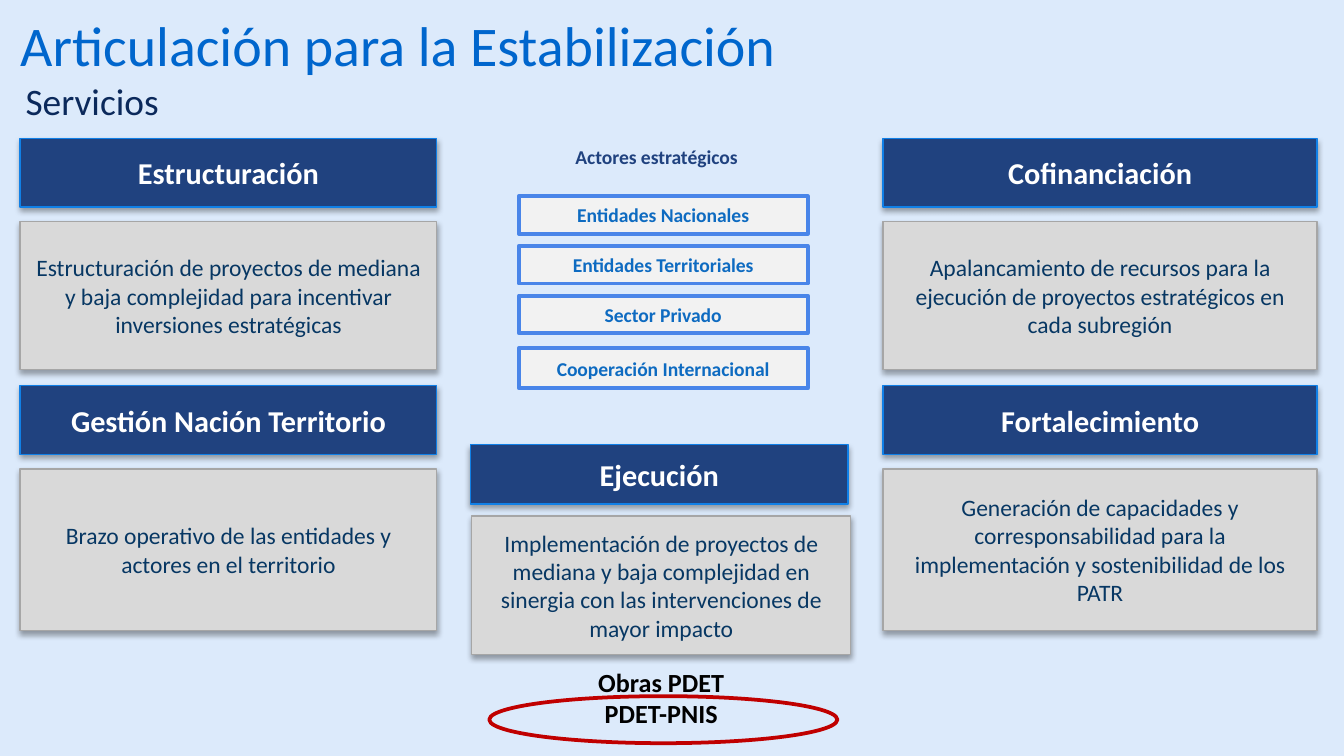
from lxml import etree
from pptx import Presentation, util as u
from pptx.dml.color import RGBColor
from pptx.enum import shapes, text
from pptx.oxml.ns import qn

# Content: heading, body, column and band
SERVICES = [
    ("Estructuración",
     "Estructuración de proyectos de mediana y baja complejidad para incentivar "
     "inversiones estratégicas", "left", "upper"),
    ("Gestión Nación Territorio",
     "Brazo operativo de las entidades y actores en el territorio", "left", "lower"),
    ("Cofinanciación",
     "Apalancamiento de recursos para la ejecución de proyectos estratégicos en "
     "cada subregión", "right", "upper"),
    ("Fortalecimiento",
     "Generación de capacidades y corresponsabilidad para la implementación y "
     "sostenibilidad de los PATR", "right", "lower"),
    ("Ejecución",
     "Implementación de proyectos de mediana y baja complejidad en sinergia con las "
     "intervenciones de mayor impacto", "center", "execution"),
]
ACTORS_TITLE = "Actores estratégicos"
ACTORS = [
    ("Entidades Nacionales", 1.46, 0.28),
    ("Entidades Territoriales", 1.83, 0.28),
    ("Sector Privado", 2.2, 0.28),
    ("Cooperación Internacional", 2.59, 0.3),
]
WORKS = ["Obras PDET", "PDET-PNIS"]

# Grid: heading and body (left, width) by column, (top, height) by band
SLIDE_WIDTH = 10
SLIDE_HEIGHT = SLIDE_WIDTH * 9 / 16
COLUMNS = {
    "left": ((0.15, 3.1), (0.15, 3.1)),
    "center": ((3.5, 2.81), (3.51, 2.82)),
    "right": ((6.57, 3.23), (6.57, 3.23)),
}
BANDS = {
    "upper": ((1.03, 0.51), (1.65, 1.1)),
    "lower": ((2.87, 0.51), (3.49, 1.2)),
    "execution": ((3.31, 0.44), (3.84, 1.03)),
}

# Text styles are (size, colour, bold); box styles are (fill, line, width, shadow)
THEME = {
    "font": "Calibri",
    "background": "DCEAFB",
    "text": {
        "title": (30, "0066CD", False),
        "subtitle": (20, "0B295B", False),
        "heading": (16.2, "FFFFFF", True),
        "body": (12.6, "073763", False),
        "actor": (10.5, "0E6BC1", True),
        "actors_title": (10.5, "20427F", True),
        "works": (14, "000000", True),
    },
    "box": {
        "heading": ("20427F", "1080E7", 0.75, True),
        "body": ("D9D9D9", "A6A6A6", 0.75, True),
        "actor": ("F2F2F2", "4985E9", 2, False),
        "highlight": (None, "C00000", 2, False),
    },
}


def color(value):
    return RGBColor.from_string(value)


def write(shape, lines, style, align, anchor):
    size, ink, bold = THEME["text"][style]
    frame = shape.text_frame
    frame.word_wrap = True
    frame.vertical_anchor = anchor
    for index, line in enumerate(lines):
        para = frame.paragraphs[0] if index == 0 else frame.add_paragraph()
        para.alignment = align
        span = para.add_run()
        span.text = line
        span.font.name = THEME["font"]
        span.font.size = u.Pt(size)
        span.font.bold = bold
        span.font.color.rgb = color(ink)
    return frame


def add_shadow(shape):
    effects = shape._element.spPr.find(qn("a:effectLst"))
    shadow = etree.SubElement(effects, qn("a:outerShdw"), blurRad=str(u.Pt(3.1)),
                              dist=str(u.Pt(1.8)), dir="5400000", rotWithShape="0")
    ink = etree.SubElement(shadow, qn("a:srgbClr"), val="000000")
    etree.SubElement(ink, qn("a:alpha"), val="35000")


def add_box(page, at, style, label=None, kind=shapes.MSO_SHAPE.RECTANGLE):
    fill, line, width, shadowed = THEME["box"][style]
    box = page.shapes.add_shape(kind, *map(u.Inches, at))
    box.shadow.inherit = False
    if fill:
        box.fill.solid()
        box.fill.fore_color.rgb = color(fill)
    else:
        box.fill.background()
    box.line.color.rgb = color(line)
    box.line.width = u.Pt(width)
    if shadowed:
        add_shadow(box)
    if label:
        write(box, [label], style, text.PP_ALIGN.CENTER, text.MSO_ANCHOR.MIDDLE)


def add_label(page, at, lines, style, align=text.PP_ALIGN.CENTER,
              anchor=text.MSO_ANCHOR.TOP):
    label = page.shapes.add_textbox(*map(u.Inches, at))
    return write(label, lines, style, align, anchor)


def main():
    deck = Presentation()
    deck.slide_width, deck.slide_height = u.Inches(SLIDE_WIDTH), u.Inches(SLIDE_HEIGHT)
    page = deck.slides.add_slide(deck.slide_layouts[6])
    page.background.fill.solid()
    page.background.fill.fore_color.rgb = color(THEME["background"])

    # Title and subtitle
    title = add_label(page, (0.08, 0.01, 7.98, 0.7), ["Articulación para la Estabilización"],
                      "title", text.PP_ALIGN.LEFT, text.MSO_ANCHOR.MIDDLE)
    title.margin_left = title.margin_right = u.Inches(0.07)
    title.margin_top = title.margin_bottom = u.Inches(0.04)
    title.paragraphs[0].line_spacing = 0.9
    subtitle = add_label(page, (0, 0.53, 10, 0.42), ["Servicios"], "subtitle",
                         text.PP_ALIGN.LEFT)
    subtitle.margin_left = u.Inches(0.19)

    # Services: a heading box above a body box
    for heading, body, column, band in SERVICES:
        parts = zip(("heading", "body"), (heading, body), COLUMNS[column], BANDS[band])
        for style, label, (left, width), (top, height) in parts:
            add_box(page, (left, top, width, height), style, label)

    # Strategic actors
    add_label(page, (3.81, 1.03, 2.15, 0.28), [ACTORS_TITLE], "actors_title")
    for name, top, height in ACTORS:
        add_box(page, (3.86, top, 2.15, height), "actor", name)

    # Works, with the second line circled
    add_label(page, (3.36, 4.91, 3.12, 0.57), WORKS, "works")
    add_box(page, (3.64, 5.18, 2.59, 0.35), "highlight", kind=shapes.MSO_SHAPE.OVAL)

    deck.save("out.pptx")


if __name__ == "__main__":
    main()
